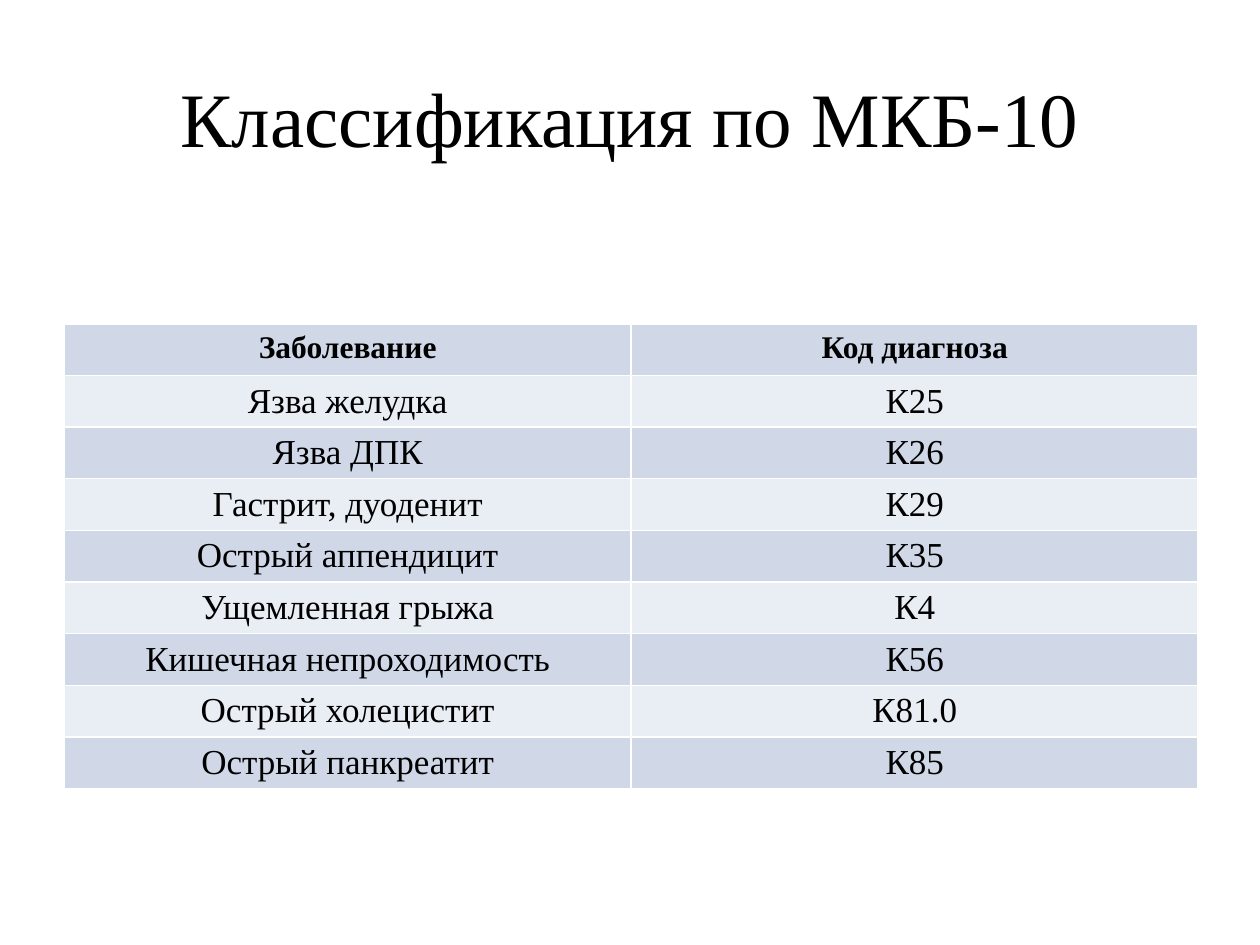
from lxml import etree
from pptx import Presentation
from pptx.dml.color import RGBColor as RGB
from pptx.enum.text import MSO_ANCHOR as ANCHOR, PP_ALIGN as ALIGN
from pptx.oxml.ns import qn
from pptx.util import Inches, Pt

COLORS = {"text": "000000", "dark": "D0D8E8", "light": "E9EDF4", "border": "FFFFFF"}
FONT = "Times New Roman"
ROWS = [
    ("Заболевание", "Код диагноза"),
    ("Язва желудка", "К25"),
    ("Язва ДПК", "К26"),
    ("Гастрит, дуоденит", "К29"),
    ("Острый аппендицит", "К35"),
    ("Ущемленная грыжа", "К4"),
    ("Кишечная непроходимость", "К56"),
    ("Острый холецистит", "К81.0"),
    ("Острый панкреатит", "К85"),
]
ROW_H = 0.41


def add_text(tf, text, size, bold=False):
    p = tf.paragraphs[0]
    p.alignment = ALIGN.CENTER
    r = p.add_run()
    r.text = text
    r.font.name = FONT
    r.font.size = Pt(size)
    r.font.bold = bold
    r.font.color.rgb = RGB.from_string(COLORS["text"])


def add_borders(cell):
    tc_pr = cell._tc.get_or_add_tcPr()
    for side in ("lnL", "lnR", "lnT", "lnB"):
        ln = etree.SubElement(tc_pr, qn(f"a:{side}"), w=str(Pt(1)))
        fill = etree.SubElement(ln, qn("a:solidFill"))
        etree.SubElement(fill, qn("a:srgbClr"), val=COLORS["border"])


prs = Presentation()
prs.slide_width, prs.slide_height = Inches(10), Inches(7.5)
s = prs.slides.add_slide(prs.slide_layouts[5])

# Title
title = s.shapes.title
title.left, title.top = Inches(0.5), Inches(0.3)
title.width, title.height = Inches(9), Inches(1.25)
title.text_frame.vertical_anchor = ANCHOR.MIDDLE
add_text(title.text_frame, "Классификация по МКБ-10", 44)

# Table of diagnosis codes
table = s.shapes.add_table(len(ROWS), 2, Inches(0.51), Inches(2.57),
                           Inches(9), Inches(ROW_H * len(ROWS))).table
for col in table.columns:
    col.width = Inches(4.5)
for i, texts in enumerate(ROWS):
    table.rows[i].height = Inches(ROW_H)
    for j, text in enumerate(texts):
        cell = table.cell(i, j)
        cell.margin_top, cell.margin_bottom = Inches(0.05), Inches(0.03)
        add_borders(cell)
        cell.fill.solid()
        cell.fill.fore_color.rgb = RGB.from_string(COLORS["light" if i % 2 else "dark"])
        add_text(cell.text_frame, text, 20 if i else 18, bold=i == 0)

prs.save("out.pptx")
